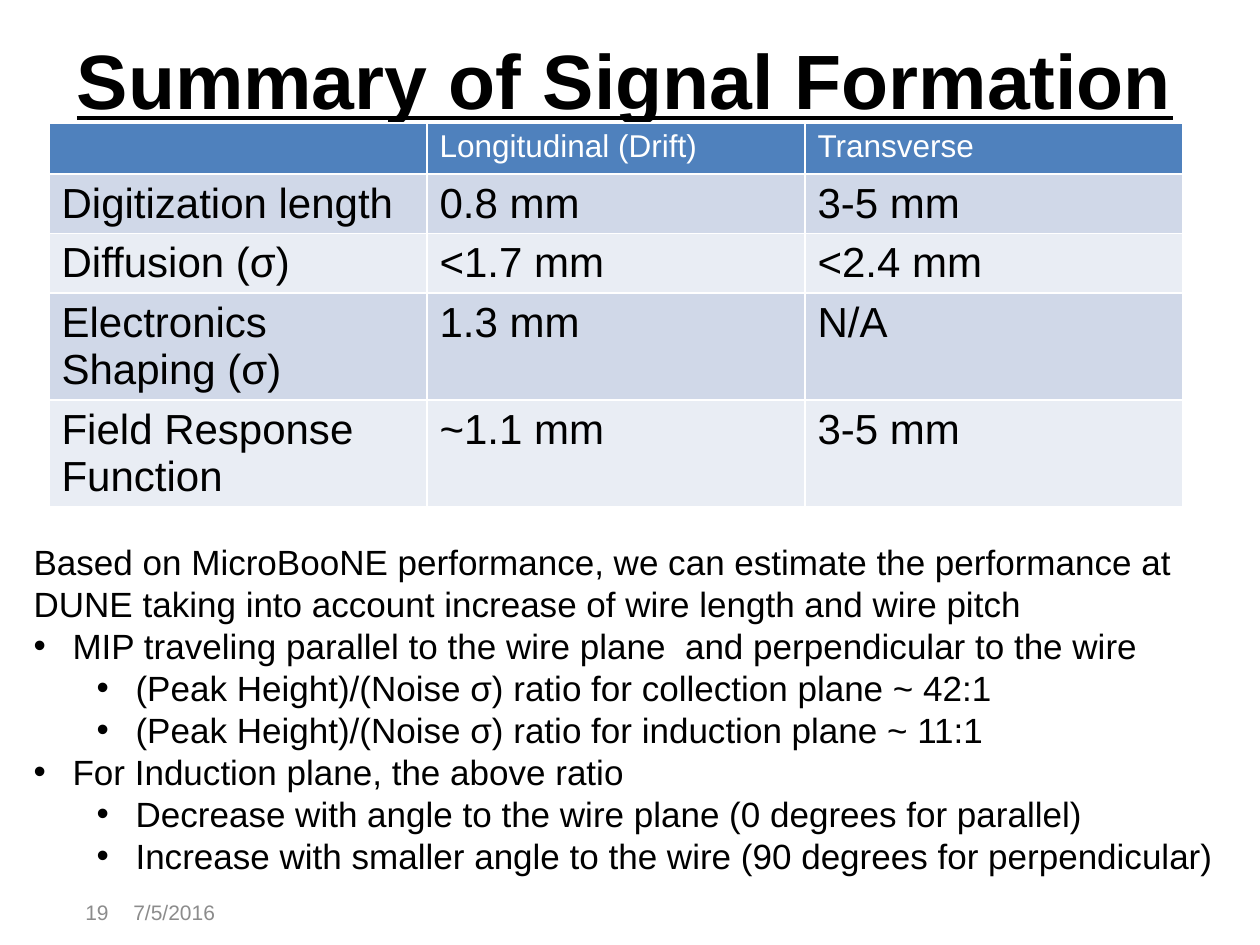
from typing import NamedTuple

from lxml import etree
from pptx import Presentation
from pptx.dml import color
from pptx.enum import text
from pptx.oxml import ns
from pptx.util import Emu, Pt

EMU_PER_PX = 914400 / 126
FONT = "Arial"
BLACK, WHITE, GRAY = "000000", "FFFFFF", "8C8C8C"
HEADER_FILL = "4F81BD"
BAND_FILLS = ("D0D8E8", "E9EDF4")
HANGING = 39
LEVEL_STEP = 63


class Box(NamedTuple):
    left: int
    top: int
    width: int
    height: int


class Item(NamedTuple):
    words: str
    level: int = 0
    bulleted: bool = True


class Footer(NamedTuple):
    words: str
    box: Box
    alignment: text.PP_ALIGN


TABLE_BOX = Box(49, 123, 1134, 383)
ROW_HEIGHTS = (51, 59, 59, 107, 107)
ROWS = (
    ("", "Longitudinal (Drift)", "Transverse"),
    ("Digitization length", "0.8 mm", "3-5 mm"),
    ("Diffusion (σ)", "<1.7 mm", "<2.4 mm"),
    ("Electronics Shaping (σ)", "1.3 mm", "N/A"),
    ("Field Response Function", "~1.1 mm", "3-5 mm"),
)
ITEMS = (
    Item("Based on MicroBooNE performance, we can estimate the performance at "
         "DUNE taking into account increase of wire length and wire pitch", bulleted=False),
    Item("MIP traveling parallel to the wire plane  and perpendicular to the wire"),
    Item("(Peak Height)/(Noise σ) ratio for collection plane ~ 42:1", 1),
    Item("(Peak Height)/(Noise σ) ratio for induction plane ~ 11:1", 1),
    Item("For Induction plane, the above ratio"),
    Item("Decrease with angle to the wire plane (0 degrees for parallel)", 1),
    Item("Increase with smaller angle to the wire (90 degrees for perpendicular)", 1),
)
FOOTERS = (
    Footer("7/5/2016", Box(121, 902, 137, 21), text.PP_ALIGN.LEFT),
    Footer("19", Box(63, 902, 58, 21), text.PP_ALIGN.RIGHT),
)


def px(length: int) -> Emu:
    return Emu(round(length * EMU_PER_PX))


def rgb(value: str) -> color.RGBColor:
    return color.RGBColor.from_string(value)


def place(shape, box: Box) -> None:
    shape.left, shape.top, shape.width, shape.height = map(px, box)


def add_run(paragraph, words: str, size: int, ink: str, bold: bool = False,
            underline: bool = False) -> None:
    run = paragraph.add_run()
    run.text = words
    font = run.font
    font.name, font.size = FONT, Pt(size)
    font.bold, font.underline = bold, underline
    font.color.rgb = rgb(ink)


def set_bullet(paragraph, item: Item) -> None:
    properties = paragraph._p.get_or_add_pPr()
    margin = HANGING + item.level * LEVEL_STEP if item.bulleted else 0
    properties.set("marL", str(px(margin)))
    properties.set("indent", str(px(-HANGING if item.bulleted else 0)))
    if item.bulleted:
        etree.SubElement(properties, ns.qn("a:buFont")).set("typeface", FONT)
        etree.SubElement(properties, ns.qn("a:buChar")).set("char", "•")
    else:
        etree.SubElement(properties, ns.qn("a:buNone"))


def write_title(shape) -> None:
    place(shape, Box(58, 0, 1134, 158))
    frame = shape.text_frame
    frame.auto_size = text.MSO_AUTO_SIZE.NONE
    frame.vertical_anchor = text.MSO_ANCHOR.MIDDLE
    paragraph = frame.paragraphs[0]
    paragraph.alignment = text.PP_ALIGN.CENTER
    add_run(paragraph, "Summary of Signal Formation", 44, BLACK, True, True)


def write_list(shape) -> None:
    place(shape, Box(21, 534, 1218, 394))
    frame = shape.text_frame
    frame.auto_size = text.MSO_AUTO_SIZE.NONE
    for index, item in enumerate(ITEMS):
        paragraph = frame.add_paragraph() if index else frame.paragraphs[0]
        paragraph.level = item.level
        set_bullet(paragraph, item)
        paragraph.space_before = Pt(0)
        add_run(paragraph, item.words, 20, BLACK)


def draw_table(slide) -> None:
    table = slide.shapes.add_table(len(ROWS), len(ROWS[0]), *map(px, TABLE_BOX)).table
    for row_index, (words_in_row, height) in enumerate(zip(ROWS, ROW_HEIGHTS)):
        table.rows[row_index].height = px(height)
        is_header = row_index == 0
        fill = HEADER_FILL if is_header else BAND_FILLS[(row_index - 1) % 2]
        size, ink = (18, WHITE) if is_header else (24, BLACK)
        for column_index, words in enumerate(words_in_row):
            cell = table.cell(row_index, column_index)
            cell.fill.solid()
            cell.fill.fore_color.rgb = rgb(fill)
            if words:
                add_run(cell.text_frame.paragraphs[0], words, size, ink)


def draw_footer(slide, footer: Footer) -> None:
    frame = slide.shapes.add_textbox(*map(px, footer.box)).text_frame
    frame.word_wrap = True
    frame.vertical_anchor = text.MSO_ANCHOR.MIDDLE
    paragraph = frame.paragraphs[0]
    paragraph.alignment = footer.alignment
    add_run(paragraph, footer.words, 12, GRAY)


def main() -> None:
    presentation = Presentation()
    presentation.slide_width, presentation.slide_height = px(1260), px(945)
    slide = presentation.slides.add_slide(presentation.slide_layouts[1])
    write_title(slide.shapes.title)
    draw_table(slide)
    write_list(slide.placeholders[1])
    for footer in FOOTERS:
        draw_footer(slide, footer)
    presentation.save("out.pptx")


if __name__ == "__main__":
    main()
